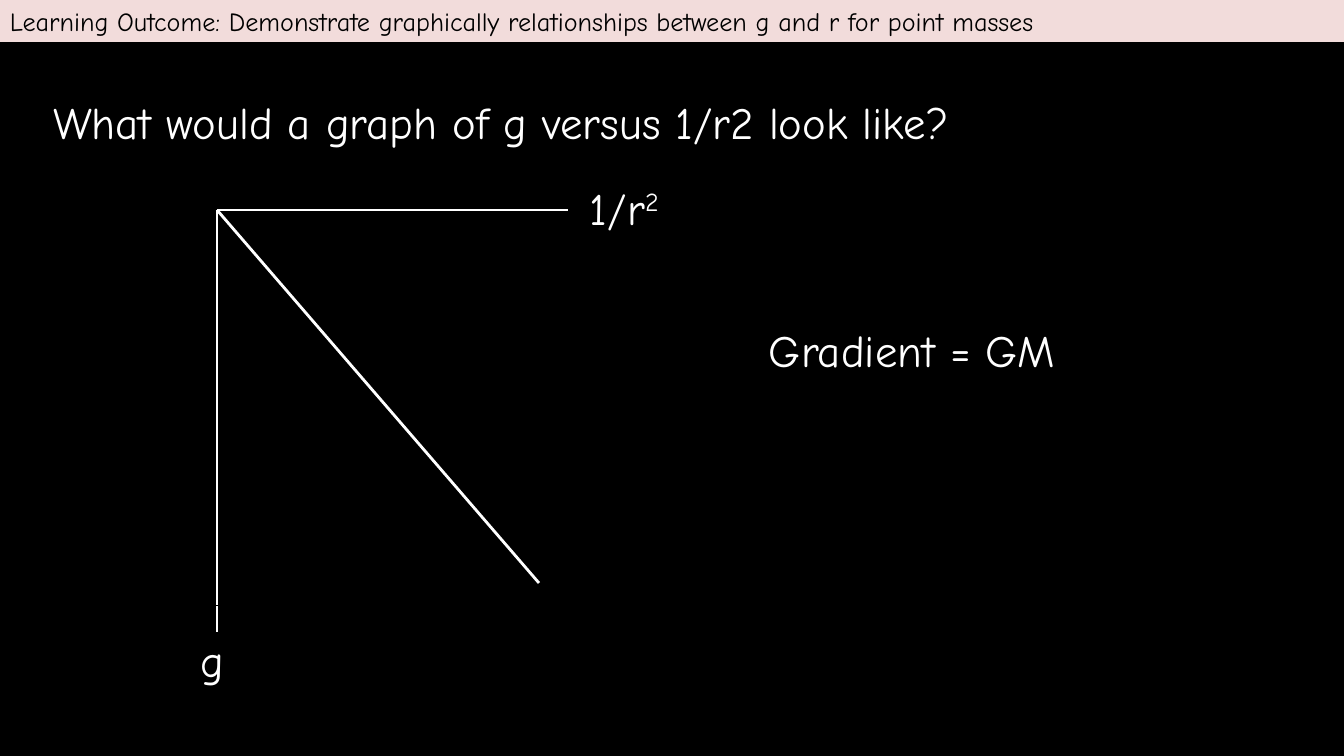
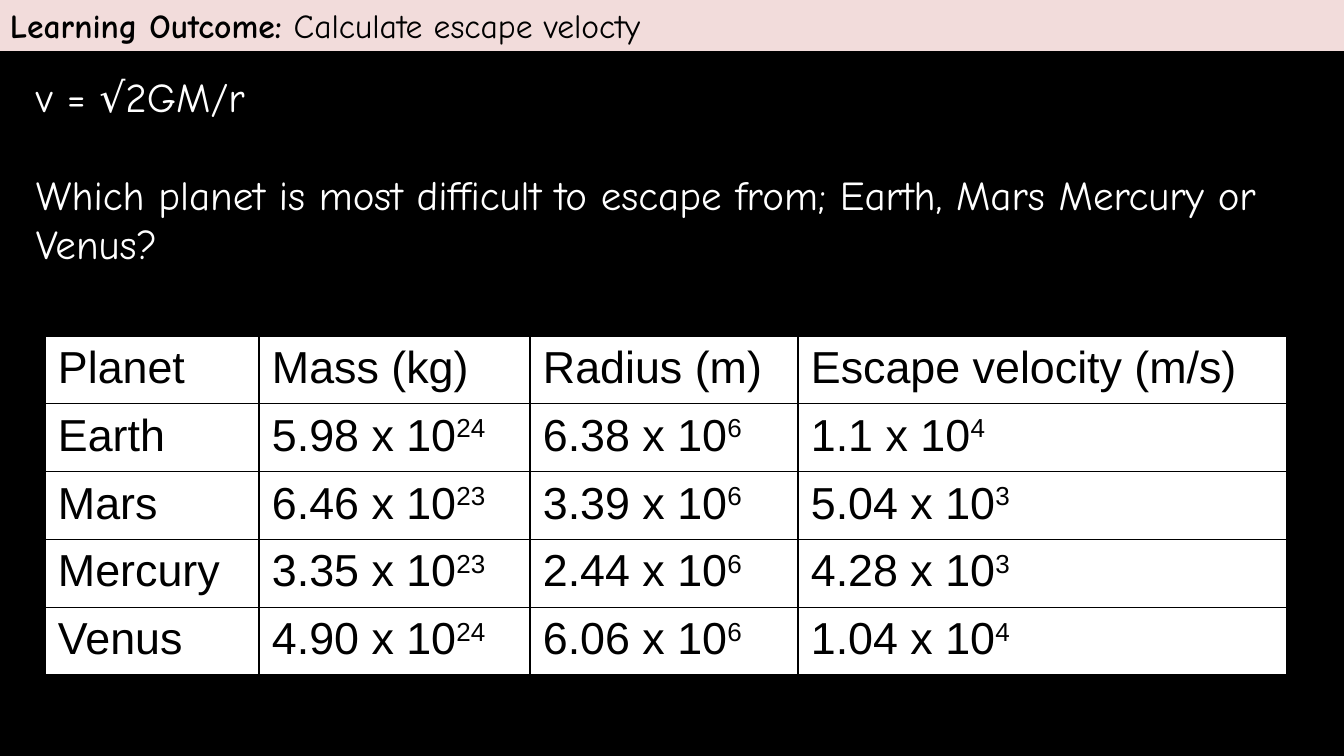
from pptx import Presentation
from pptx.dml.color import RGBColor
from pptx.enum.shapes import MSO_CONNECTOR, MSO_SHAPE
from pptx.enum.text import MSO_ANCHOR
from pptx.oxml import parse_xml
from pptx.oxml.ns import nsdecls
from pptx.util import Pt

BLACK, WHITE, PINK = "000000", "FFFFFF", "F2DCDB"
HAND, SANS = "Comic Neue", "Arial"
SCALE = 12192000 / 1344
rgb = RGBColor.from_string


def px(*sizes):
    return [round(size * SCALE) for size in sizes]


def write(para, text, size, color, face=HAND):
    """Fill a paragraph; what follows ^ is raised."""
    para.font.size = Pt(size)
    para.font.name = face
    para.font.color.rgb = rgb(color)
    base, _, power = text.partition("^")
    if base:
        para.add_run().text = base
    if power:
        run = para.add_run()
        run.text = power
        run._r.get_or_add_rPr().set("baseline", "30000")


deck = Presentation()
deck.slide_width, deck.slide_height = px(1344, 756)

# Shared background and outcome band
bands = [
    (42, 18.7, "", "Learning Outcome: Demonstrate graphically relationships "
                   "between g and r for point masses"),
    (51, 24, "Learning Outcome: ", "Calculate escape velocty"),
]
slides = []
for height, size, lead, goal in bands:
    slide = deck.slides.add_slide(deck.slide_layouts[6])
    slide.background.fill.solid()
    slide.background.fill.fore_color.rgb = rgb(BLACK)
    band = slide.shapes.add_textbox(*px(0, 0, 1344, height))
    band.fill.solid()
    band.fill.fore_color.rgb = rgb(PINK)
    band.text_frame.word_wrap = True
    para = band.text_frame.paragraphs[0]
    if lead:
        run = para.add_run()
        run.text = lead
        run.font.bold = True
    write(para, goal, size, BLACK)
    slides.append(slide)
graph, escape = slides

# Axes and straight-line graph from one origin
start = (217, 210)
for end in [(217, 632), (568, 210), (539, 583)]:
    line = graph.shapes.add_connector(MSO_CONNECTOR.STRAIGHT, *px(*start, *end))
    line.line.color.rgb = rgb(WHITE)
    line.line.width = Pt(2)
    line._element.spPr.append(parse_xml(f"<a:effectLst {nsdecls('a')}/>"))

# Question and graph labels
labels = [
    ("What would a graph of g versus 1/r2 look like?", 40, 78, 1251, 88),
    ("Gradient = GM", 756, 296, 557, 107),
    ("1/r^2", 577, 154, 126, 107),
    ("g", 188, 606, 82, 107),
]
for text, *place in labels:
    label = graph.shapes.add_shape(MSO_SHAPE.RECTANGLE, *px(*place))
    label.shadow.inherit = False
    label.fill.background()
    label.line.color.rgb = rgb(BLACK)
    label.line.width = Pt(0.75)
    frame = label.text_frame
    frame.word_wrap = True
    frame.vertical_anchor = MSO_ANCHOR.MIDDLE
    frame.margin_left, frame.margin_top, frame.margin_right, frame.margin_bottom = px(13, 7, 13, 7)
    para = frame.paragraphs[0]
    para.alignment = 1
    write(para, text, 32, WHITE)

# Formula and question
frame = escape.shapes.add_textbox(*px(23, 64, 1268, 176)).text_frame
frame.word_wrap = True
frame.margin_left, frame.margin_top, frame.margin_right, frame.margin_bottom = px(13, 7, 13, 7)
write(frame.paragraphs[0], "v = √2GM/r", 29.3, WHITE)
para = frame.add_paragraph()
para.space_before = Pt(35)
write(para, "Which planet is most difficult to escape from; "
            "Earth, Mars Mercury or Venus?", 29.3, WHITE)

# Planet table
rows = [
    ("Planet", "Mass (kg)", "Radius (m)", "Escape velocity (m/s)"),
    ("Earth", "5.98 x 10^24", "6.38 x 10^6", "1.1 x 10^4"),
    ("Mars", "6.46 x 10^23", "3.39 x 10^6", "5.04 x 10^3"),
    ("Mercury", "3.35 x 10^23", "2.44 x 10^6", "4.28 x 10^3"),
    ("Venus", "4.90 x 10^24", "6.06 x 10^6", "1.04 x 10^4"),
]
widths = px(214, 271, 268, 489)
table = escape.shapes.add_table(len(rows), len(widths), *px(45, 336, 1242, 335)).table
table.first_row = table.horz_banding = False
for column, width in zip(table.columns, widths):
    column.width = width
for r, row in enumerate(rows):
    for c, text in enumerate(row):
        cell = table.cell(r, c)
        for side in "LRTB":
            cell._tc.get_or_add_tcPr().append(parse_xml(
                f'<a:ln{side} {nsdecls("a")} w="12700"><a:solidFill>'
                f'<a:srgbClr val="{BLACK}"/></a:solidFill></a:ln{side}>'))
        cell.fill.solid()
        cell.fill.fore_color.rgb = rgb(WHITE)
        cell.margin_left, cell.margin_top, cell.margin_right, cell.margin_bottom = px(13, 7, 13, 7)
        write(cell.text_frame.paragraphs[0], text, 32, BLACK, SANS)

deck.save("out.pptx")
